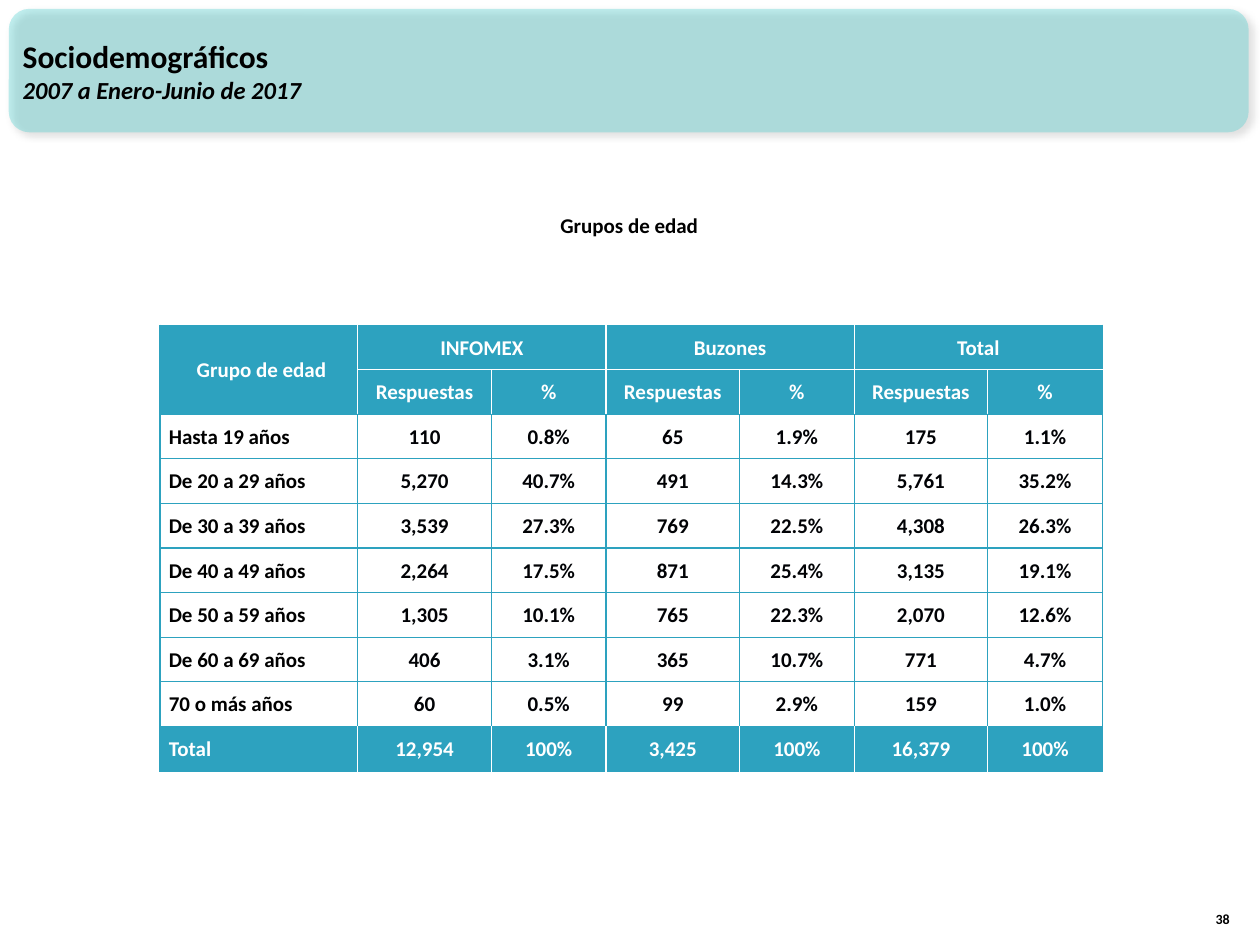
from dataclasses import dataclass

from lxml.etree import SubElement
from pptx import Presentation
from pptx.dml.color import RGBColor
from pptx.enum.shapes import MSO_SHAPE as Shape
from pptx.enum.text import MSO_ANCHOR as Anchor, PP_ALIGN as Align
from pptx.oxml import parse_xml
from pptx.oxml.ns import nsdecls, qn
from pptx.util import Inches, Pt


@dataclass(frozen=True)
class Theme:
    font: str = "Calibri"
    black: str = "000000"
    figure: str = "010205"
    white: str = "FFFFFF"
    teal: str = "2DA2BF"
    banner: str = "33CCCC"
    title_size: int = 18
    subtitle_size: int = 14
    body_size: int = 12
    number_size: int = 8
    rule_width: float = 0.75


GROUPS = ["INFOMEX", "Buzones", "Total"]
HEADER = [
    ["Grupo de edad"] + [text for group in GROUPS for text in (group, "")],
    [""] + ["Respuestas", "%"] * len(GROUPS),
]
AGES = [
    ["Hasta 19 años", "110", "0.8%", "65", "1.9%", "175", "1.1%"],
    ["De 20 a 29 años", "5,270", "40.7%", "491", "14.3%", "5,761", "35.2%"],
    ["De 30 a 39 años", "3,539", "27.3%", "769", "22.5%", "4,308", "26.3%"],
    ["De 40 a 49 años", "2,264", "17.5%", "871", "25.4%", "3,135", "19.1%"],
    ["De 50 a 59 años", "1,305", "10.1%", "765", "22.3%", "2,070", "12.6%"],
    ["De 60 a 69 años", "406", "3.1%", "365", "10.7%", "771", "4.7%"],
    ["70 o más años", "60", "0.5%", "99", "2.9%", "159", "1.0%"],
]
TOTALS = ["Total", "12,954", "100%", "3,425", "100%", "16,379", "100%"]
COLUMN_WIDTHS = [1.57] + [1.06, 0.91] * len(GROUPS)


def write(para, text, *, theme, size, color, align=Align.LEFT, italic=False, indent=0):
    para.alignment = align
    if indent:
        para._p.get_or_add_pPr().set("marL", str(Inches(indent)))
    para.space_before = Pt(0)
    span = para.add_run()
    span.text = text
    font = span.font
    font.name, font.size = theme.font, Pt(size)
    font.bold, font.italic = True, italic
    font.color.rgb = RGBColor.from_string(color)


def set_borders(cell, colors, width):
    """Draw the cell edges; colors maps L, R, T and B to a colour."""
    properties = cell._tc.get_or_add_tcPr()
    for index, (side, color) in enumerate(colors.items()):
        properties.insert(index, parse_xml(
            f'<a:ln{side} {nsdecls("a")} w="{Pt(width)}"><a:solidFill>'
            f'<a:srgbClr val="{color}"/></a:solidFill></a:ln{side}>'))


class SlideBuilder:
    def __init__(self, deck, theme):
        self.theme = theme
        self.slide = deck.slides.add_slide(deck.slide_layouts[5])

    def title(self, title, subtitle, left, top, width, height):
        box, theme = self.slide.shapes.title, self.theme
        box.left, box.top, box.width, box.height = map(Inches, (left, top, width, height))
        frame = box.text_frame
        frame.vertical_anchor = Anchor.MIDDLE
        write(frame.paragraphs[0], title, theme=theme,
              size=theme.title_size, color=theme.black)
        write(frame.add_paragraph(), subtitle, theme=theme,
              size=theme.subtitle_size, color=theme.black, italic=True)

    def banner(self, left, top, width, height):
        """Place a translucent, shadowed band behind the title."""
        band = self.slide.shapes.add_shape(
            Shape.ROUNDED_RECTANGLE, *map(Inches, (left, top, width, height)))
        band.shadow.inherit = False
        band.fill.solid()
        band.fill.fore_color.rgb = RGBColor.from_string(self.theme.banner)
        band.line.fill.background()
        properties = band._element.spPr
        color = properties.find(qn("a:solidFill")).find(qn("a:srgbClr"))
        SubElement(color, qn("a:alpha"), val="30000")
        properties.find(qn("a:effectLst")).append(parse_xml(
            f'<a:outerShdw {nsdecls("a")} blurRad="{Pt(4)}" dist="{Pt(3)}" '
            f'dir="{45 * 60000}" algn="tl" rotWithShape="0">'
            f'<a:srgbClr val="{self.theme.black}"><a:alpha val="40000"/></a:srgbClr>'
            '</a:outerShdw>'))
        self.slide.shapes.title._element.addprevious(band._element)

    def text(self, text, left, top, width, height, *, size, align, anchor=Anchor.TOP):
        box = self.slide.shapes.add_textbox(*map(Inches, (left, top, width, height)))
        frame = box.text_frame
        frame.word_wrap = True
        frame.vertical_anchor = anchor
        write(frame.paragraphs[0], text, theme=self.theme, size=size,
              color=self.theme.black, align=align)

    def table(self, header, body, totals, widths, left, top, height):
        rows = header + body + [totals]
        last_row, last_column = len(rows) - 1, len(widths) - 1
        table = self.slide.shapes.add_table(
            len(rows), len(widths),
            *map(Inches, (left, top, sum(widths), height))).table
        table.first_row = table.horz_banding = False
        for column, width in zip(table.columns, widths):
            column.width = Inches(width)

        table.cell(0, 0).merge(table.cell(len(header) - 1, 0))
        for first in range(1, len(widths), 2):
            table.cell(0, first).merge(table.cell(0, first + 1))

        for r, texts in enumerate(rows):
            for c, text in enumerate(texts):
                cell = table.cell(r, c)
                if not cell.is_spanned:
                    self.cell(cell, text, r, c, len(header), last_row, last_column)

    def cell(self, cell, text, row, column, header_rows, last_row, last_column):
        """Format one cell: edges inside a filled band are white, the rest teal."""
        theme = self.theme
        in_header = row < header_rows
        filled = in_header or row == last_row
        bottom, right = row + cell.span_height - 1, column + cell.span_width - 1
        inside = {
            "L": filled and column > 0,
            "R": filled and right < last_column,
            "T": in_header and row > 0,
            "B": in_header and bottom < header_rows - 1,
        }
        if filled:
            cell.fill.solid()
            cell.fill.fore_color.rgb = RGBColor.from_string(theme.teal)
        else:
            cell.fill.background()
        set_borders(cell, {side: theme.white if white else theme.teal
                           for side, white in inside.items()}, theme.rule_width)

        cell.margin_left = cell.margin_right = cell.margin_top = Inches(0.01)
        cell.margin_bottom = 0
        cell.vertical_anchor = Anchor.MIDDLE
        is_label = column == 0
        body_color = theme.black if is_label else theme.figure
        write(cell.text_frame.paragraphs[0], text, theme=theme, size=theme.body_size,
              color=theme.white if filled else body_color,
              align=Align.LEFT if is_label and not in_header else Align.CENTER,
              indent=(0.04 if in_header else 0.06) if is_label else 0)


def main():
    deck = Presentation()
    deck.slide_width, deck.slide_height = Inches(10), Inches(7.5)
    theme = Theme()
    page = SlideBuilder(deck, theme)
    page.banner(0.07, 0.07, 9.84, 0.98)
    page.title("Sociodemográficos", "2007 a Enero-Junio de 2017", 0.08, 0.09, 9.17, 0.94)
    page.text("Grupos de edad", 0.81, 1.64, 8.37, 0.3,
              size=theme.body_size, align=Align.CENTER)
    page.table(HEADER, AGES, TOTALS, COLUMN_WIDTHS, 1.27, 2.58, 3.54)
    page.text("38", 9.46, 7.01, 0.4, 0.4,
              size=theme.number_size, align=Align.RIGHT, anchor=Anchor.BOTTOM)
    deck.save("out.pptx")


if __name__ == "__main__":
    main()
